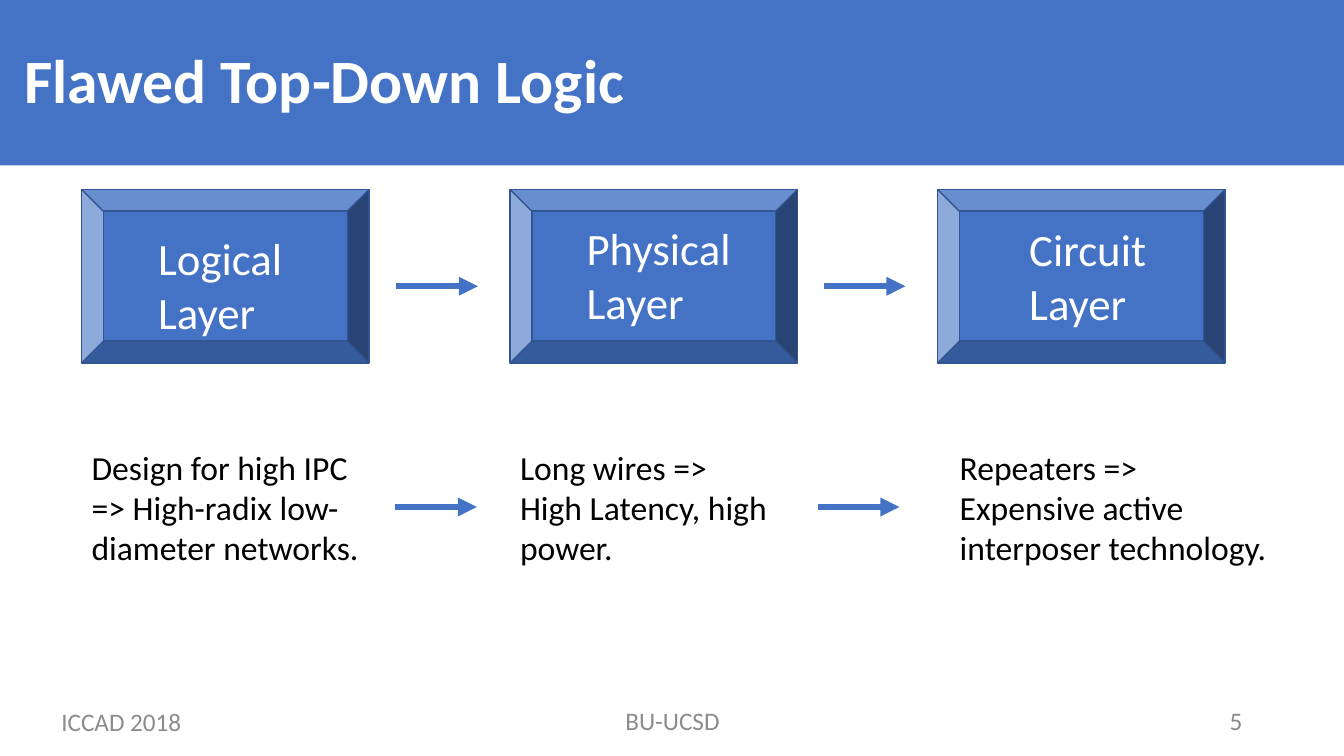
from lxml import etree
from pptx import Presentation
from pptx.dml.color import RGBColor
from pptx.enum import shapes, text
from pptx.oxml import ns
from pptx.util import Inches, Pt

BLUE = RGBColor(0x44, 0x72, 0xC4)
DARK_BLUE = RGBColor(0x32, 0x54, 0x91)
WHITE = RGBColor(0xFF, 0xFF, 0xFF)
BLACK = RGBColor(0, 0, 0)
GRAY = RGBColor(0x8C, 0x8C, 0x8C)

presentation = Presentation()
presentation.slide_width = Inches(13.33)
presentation.slide_height = Inches(7.5)
slide = presentation.slides.add_slide(presentation.slide_layouts[6])


def add_text(content, left, top, width, height, size=24, color=BLACK, bold=False,
             align=text.PP_ALIGN.LEFT, anchor=text.MSO_ANCHOR.TOP, line_spacing=1.0):
    box = slide.shapes.add_textbox(Inches(left), Inches(top), Inches(width), Inches(height))
    frame = box.text_frame
    frame.word_wrap = True
    frame.vertical_anchor = anchor
    frame.text = content
    for paragraph in frame.paragraphs:
        paragraph.alignment = align
        paragraph.line_spacing = line_spacing
        paragraph.font.name = "Calibri"
        paragraph.font.size = Pt(size)
        paragraph.font.bold = bold
        paragraph.font.color.rgb = color


def add_block(preset, left, top, width, height):
    shape = slide.shapes.add_shape(preset, Inches(left), Inches(top), Inches(width), Inches(height))
    shape.shadow.inherit = False
    shape.fill.solid()
    shape.fill.fore_color.rgb = BLUE
    return shape


# Title band
band = add_block(shapes.MSO_SHAPE.RECTANGLE, 0, -0.05, 13.33, 1.69)
band.line.fill.background()
add_text("Flawed Top-Down Logic", 0.14, 0, 12.42, 1.65, size=44, color=WHITE, bold=True,
         anchor=text.MSO_ANCHOR.MIDDLE, line_spacing=0.9)

# Footer
footers = [
    ("BU-UCSD", 4.42, 6.95, 4.5, text.PP_ALIGN.CENTER),
    ("ICCAD 2018", 0.51, 6.96, 3.66, text.PP_ALIGN.LEFT),
    ("5", 9.42, 6.95, 3, text.PP_ALIGN.RIGHT),
]
for content, left, top, width, align in footers:
    add_text(content, left, top, width, 0.4, size=18, color=GRAY, align=align,
             anchor=text.MSO_ANCHOR.MIDDLE)

# Layers: bevelled box with its label
layers = [
    ("Logical Layer", 0.81, 1.47, 2.24),
    ("Physical Layer", 5.06, 5.72, 2.14),
    ("Circuit Layer", 9.3, 10.11, 2.15),
]
for label, box_left, label_left, label_top in layers:
    bevel = add_block(shapes.MSO_SHAPE.BEVEL, box_left, 1.88, 2.85, 1.72)
    bevel.line.color.rgb = DARK_BLUE
    bevel.line.width = Pt(1)
    add_text(label, label_left, label_top, 2.2, 1.18, size=32, color=WHITE)

# Consequence under each layer
consequences = [
    ("Design for high IPC => High-radix low-diameter networks.", 0.81, 3.11),
    ("Long wires =>\nHigh Latency, high power.", 5.06, 3.51),
    ("Repeaters => Expensive active interposer technology.", 9.42, 3.25),
]
for content, left, width in consequences:
    add_text(content, left, 4.38, width, 1.31)

# Arrows between the columns
for left, y in [(3.93, 2.84), (8.17, 2.84), (3.92, 5.03), (8.11, 5.03)]:
    arrow = slide.shapes.add_connector(shapes.MSO_CONNECTOR.STRAIGHT, Inches(left), Inches(y),
                                       Inches(left + 0.81), Inches(y))
    arrow.line.color.rgb = BLUE
    arrow.line.width = Pt(4.5)
    etree.SubElement(arrow.line._get_or_add_ln(), ns.qn("a:tailEnd"), type="triangle")
    etree.SubElement(arrow._element.spPr, ns.qn("a:effectLst"))

presentation.save("out.pptx")
